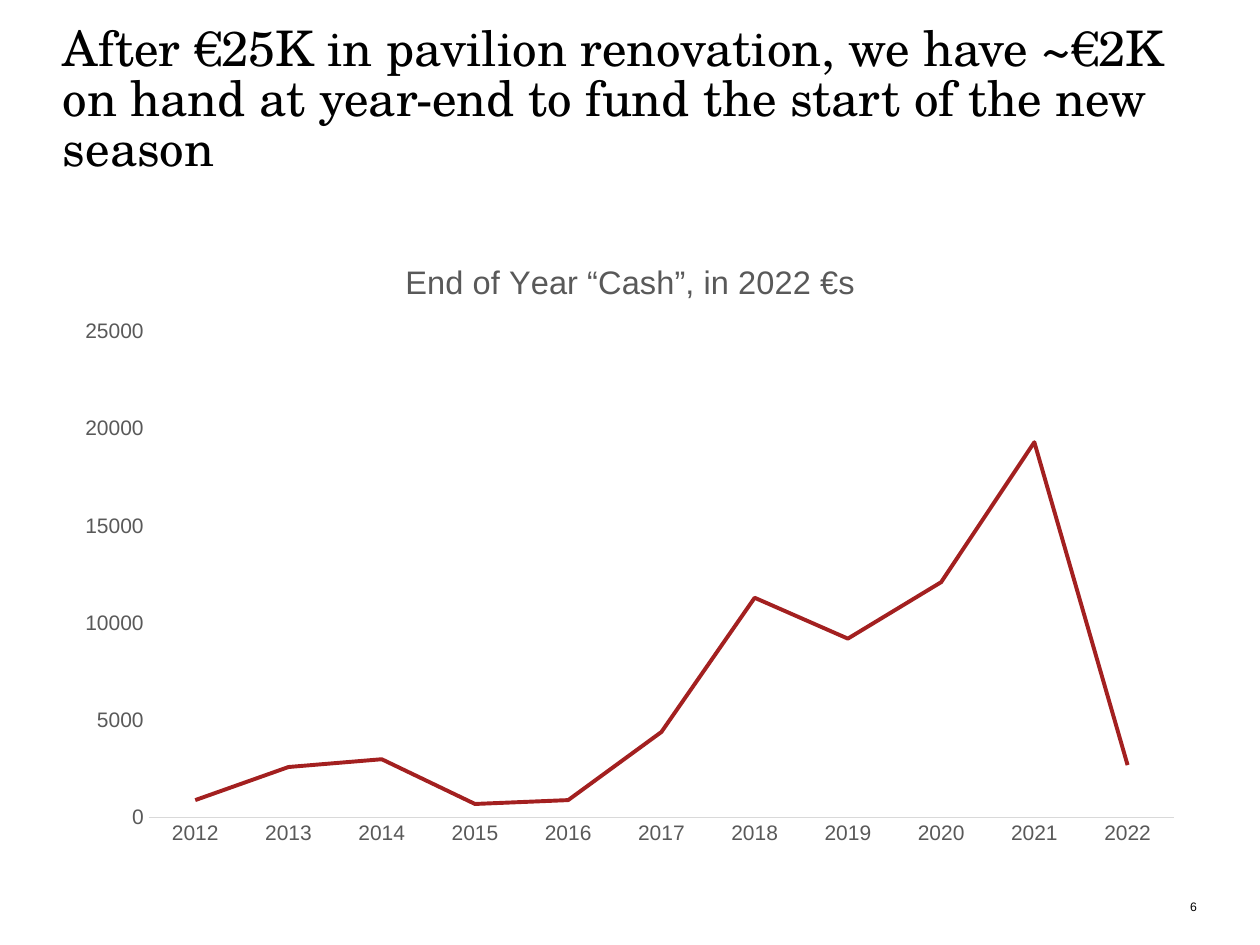
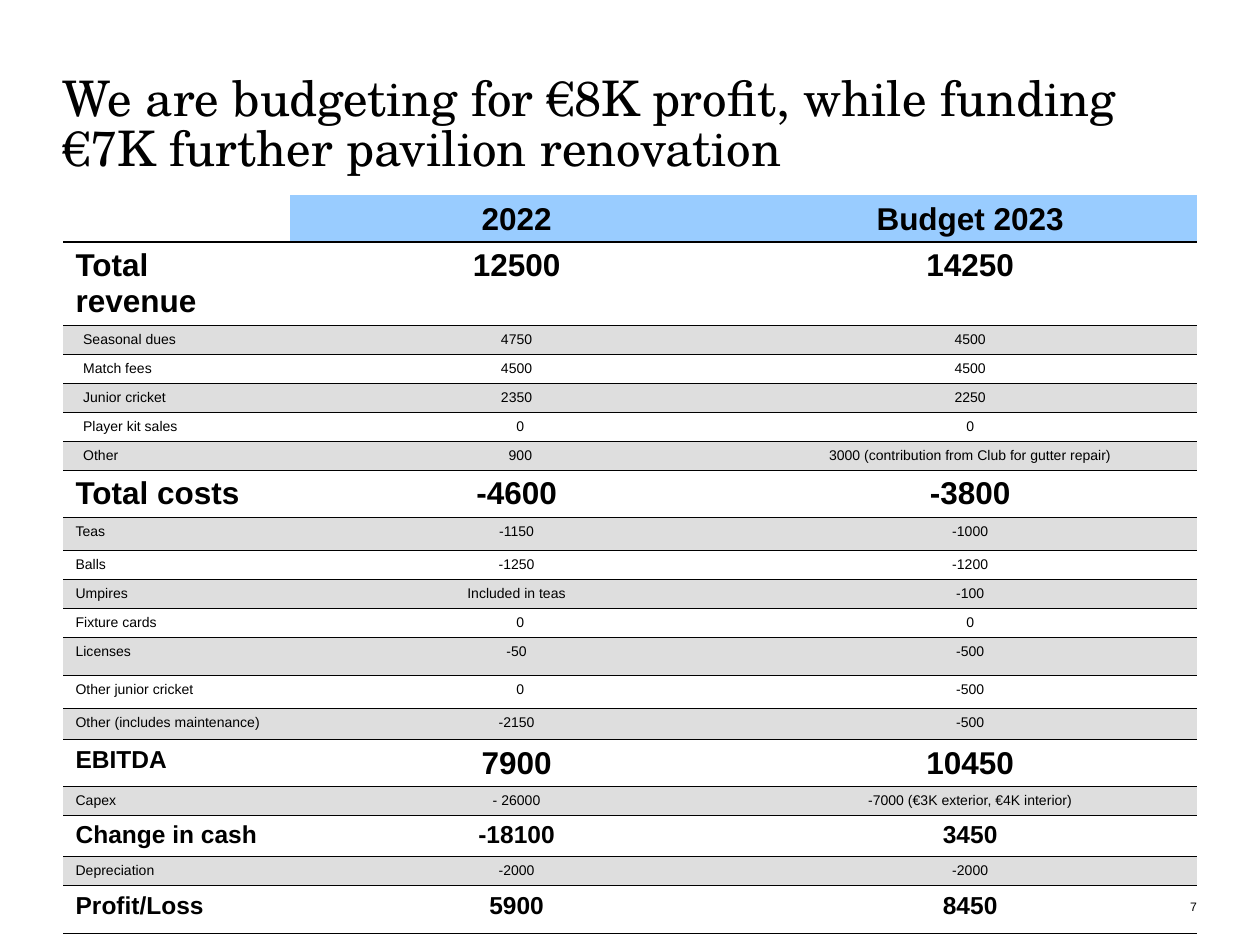
from dataclasses import dataclass

from lxml.etree import SubElement, fromstring
from pptx import Presentation
from pptx.chart.data import CategoryChartData
from pptx.dml.color import RGBColor
from pptx.enum.chart import XL_CHART_TYPE, XL_TICK_MARK
from pptx.enum.text import MSO_ANCHOR, PP_ALIGN
from pptx.oxml.ns import nsdecls, qn
from pptx.util import Pt

SCALE = 9144
SANS = "Arial"
SERIF = "TeX Gyre Schola"
COLORS = {"ink": "000000", "grey": "595959", "rule": "D9D9D9",
          "red": "A32020", "head": "99CCFF", "band": "DEDEDE"}
PLAIN = "{2D5ABB26-0587-4C30-8999-92F81FD0307C}"
YEARS = [str(year) for year in range(2012, 2023)]
CASH = [900, 2600, 3000, 700, 900, 4400, 11300, 9200, 12100, 19300, 2700]


@dataclass(frozen=True)
class Box:
    left: int
    top: int
    width: int = 0
    height: int = 0

    def emu(self) -> tuple:
        return tuple(px(n) for n in (self.left, self.top, self.width, self.height))


@dataclass(frozen=True)
class Row:
    texts: tuple
    height: int = 23
    sizes: tuple = (8, 8, 8)
    bold: bool = False
    inset: tuple = ()


BIG = (18, 18, 18)
MID = (14, 14, 14)
TITLE = Box(50, 50, 900, 90)
NUMBER = Box(770, 710, 180, 15)
CHART = Box(50, 190, 900, 490)
LABEL = Box(267, 12)
PLOT = Box(68, 73, 814, 386)
TABLE = Box(50, 155, 900, 586)
COLUMNS = (180, 360, 360)
ROWS = (
    Row(("", "2022", "Budget 2023"), 37, BIG, True),
    Row(("Total revenue", "12500", "14250"), 66, BIG, True),
    Row(("Seasonal dues", "4750", "4500"), inset=(0,)),
    Row(("Match fees", "4500", "4500"), inset=(0,)),
    Row(("Junior cricket", "2350", "2250"), inset=(0,)),
    Row(("Player kit sales", "0", "0"), inset=(0, 1)),
    Row(("Other", "900", "3000 (contribution from Club for gutter repair)"), inset=(0, 1)),
    Row(("Total costs", "-4600", "-3800"), 38, BIG, True),
    Row(("Teas", "-1150", "-1000"), 26),
    Row(("Balls", "-1250", "-1200")),
    Row(("Umpires", "Included in teas", "-100")),
    Row(("Fixture cards", "0", "0"), inset=(1,)),
    Row(("Licenses", "-50", "-500"), 30),
    Row(("Other junior cricket", "0", "-500"), 26, inset=(1,)),
    Row(("Other (includes maintenance)", "-2150", "-500"), 25),
    Row(("EBITDA", "7900", "10450"), 37, (14, 18, 18), True),
    Row(("Capex", "- 26000", "-7000 (€3K exterior, €4K interior)")),
    Row(("Change in cash", "-18100", "3450"), 33, MID, True),
    Row(("Depreciation", "-2000", "-2000")),
    Row(("Profit/Loss", "5900", "8450"), 38, MID, True),
)


def px(count: int) -> int:
    return count * SCALE


def rgb(name: str) -> RGBColor:
    return RGBColor.from_string(COLORS[name])


def style(font, size: float, color: str = "ink", face: str = SANS, bold: bool = False) -> None:
    font.name = face
    font.size = Pt(size)
    font.bold = bold
    font.color.rgb = rgb(color)


def write(slide, box: Box, text: str, size: int, face: str, align=PP_ALIGN.LEFT,
          space: float = 1.0) -> None:
    frame = slide.shapes.add_textbox(*box.emu()).text_frame
    frame.word_wrap = True
    frame.vertical_anchor = MSO_ANCHOR.BOTTOM
    frame.margin_left = frame.margin_right = frame.margin_top = frame.margin_bottom = 0
    para = frame.paragraphs[0]
    para.text = text
    para.alignment = align
    para.line_spacing = space
    style(para.font, size, face=face)


def place(parent, index: int, box: Box) -> None:
    for old in parent.findall(qn("c:layout")):
        parent.remove(old)
    layout = fromstring(f"<c:layout {nsdecls('c')}><c:manualLayout/></c:layout>")
    manual = layout[0]
    spots = {"x": box.left / CHART.width, "y": box.top / CHART.height}
    if box.width:
        SubElement(manual, qn("c:layoutTarget")).set("val", "inner")
        spots |= {"w": box.width / CHART.width, "h": box.height / CHART.height}
    for side in "xy":
        SubElement(manual, qn(f"c:{side}Mode")).set("val", "edge")
    for key, value in spots.items():
        SubElement(manual, qn(f"c:{key}")).set("val", str(value))
    parent.insert(index, layout)


def set_axis(axis) -> None:
    axis.has_major_gridlines = False
    axis.major_tick_mark = axis.minor_tick_mark = XL_TICK_MARK.NONE
    style(axis.tick_labels.font, 12, "grey")


def draw_chart(slide) -> None:
    data = CategoryChartData(number_format="0")
    data.categories = YEARS
    data.add_series("Series 1", CASH)
    chart = slide.shapes.add_chart(XL_CHART_TYPE.LINE, *CHART.emu(), data).chart
    style(chart.font, 10)
    chart.has_legend = False
    chart.has_title = True
    para = chart.chart_title.text_frame.paragraphs[0]
    para.text = "End of Year “Cash”, in 2022 €s"
    style(para.font, 18.6, "grey")
    set_axis(chart.category_axis)
    line = chart.category_axis.format.line
    line.color.rgb = rgb("rule")
    line.width = Pt(0.75)
    values = chart.value_axis
    set_axis(values)
    values.format.line.fill.background()
    values.minimum_scale, values.maximum_scale = 0, 25000
    values.major_unit = 5000
    values.tick_labels.number_format = "0"
    values.tick_labels.number_format_is_linked = False
    plot = chart.plots[0]
    plot.vary_by_categories = False
    series = plot.series[0]
    series.smooth = False
    series.format.line.color.rgb = rgb("red")
    series.format.line.width = Pt(2.25)
    root = chart.element.find(qn("c:chart"))
    place(root.find(qn("c:title")), 1, LABEL)
    place(root.find(qn("c:plotArea")), 0, PLOT)


def rule(cell, side: str, width: float) -> None:
    props = cell._tc.get_or_add_tcPr()
    line = SubElement(props, qn(f"a:ln{side}"), w=str(Pt(width)))
    fill = SubElement(line, qn("a:solidFill"))
    SubElement(fill, qn("a:srgbClr"), val=COLORS["ink"])


def fill_cell(cell, row: Row, down: int, across: int) -> None:
    if down:
        rule(cell, "T", 1.5 if down == 1 else 0.5)
    rule(cell, "B", 0.5 if down else 1.5)
    if down % 2 == 0 and (down or across):
        cell.fill.solid()
        cell.fill.fore_color.rgb = rgb("band" if down else "head")
    else:
        cell.fill.background()
    cell.margin_bottom = px(1)
    if across in row.inset:
        cell.margin_left = px(16)
    para = cell.text_frame.paragraphs[0]
    para.text = row.texts[across]
    para.alignment = PP_ALIGN.CENTER if across else PP_ALIGN.LEFT
    style(para.font, row.sizes[across], bold=row.bold)


def draw_table(slide) -> None:
    table = slide.shapes.add_table(len(ROWS), len(COLUMNS), *TABLE.emu()).table
    table.first_row = table.horz_banding = False
    table._tbl.tblPr.find(qn("a:tableStyleId")).text = PLAIN
    for column, width in zip(table.columns, COLUMNS):
        column.width = px(width)
    for down, row in enumerate(ROWS):
        table.rows[down].height = px(row.height)
        for across in range(len(COLUMNS)):
            fill_cell(table.cell(down, across), row, down, across)


def main() -> None:
    deck = Presentation()
    deck.slide_width, deck.slide_height = px(1000), px(750)
    pages = (
        ("After €25K in pavilion renovation, we have ~€2K on hand at year-end "
         "to fund the start of the new season", draw_chart),
        ("We are budgeting for €8K profit, while funding €7K further pavilion renovation",
         draw_table),
    )
    for number, (title, draw) in enumerate(pages, 6):
        slide = deck.slides.add_slide(deck.slide_layouts[6])
        write(slide, TITLE, title, 28, SERIF, space=0.85)
        draw(slide)
        write(slide, NUMBER, str(number), 7, SANS, PP_ALIGN.RIGHT)
    deck.save("out.pptx")


if __name__ == "__main__":
    main()
